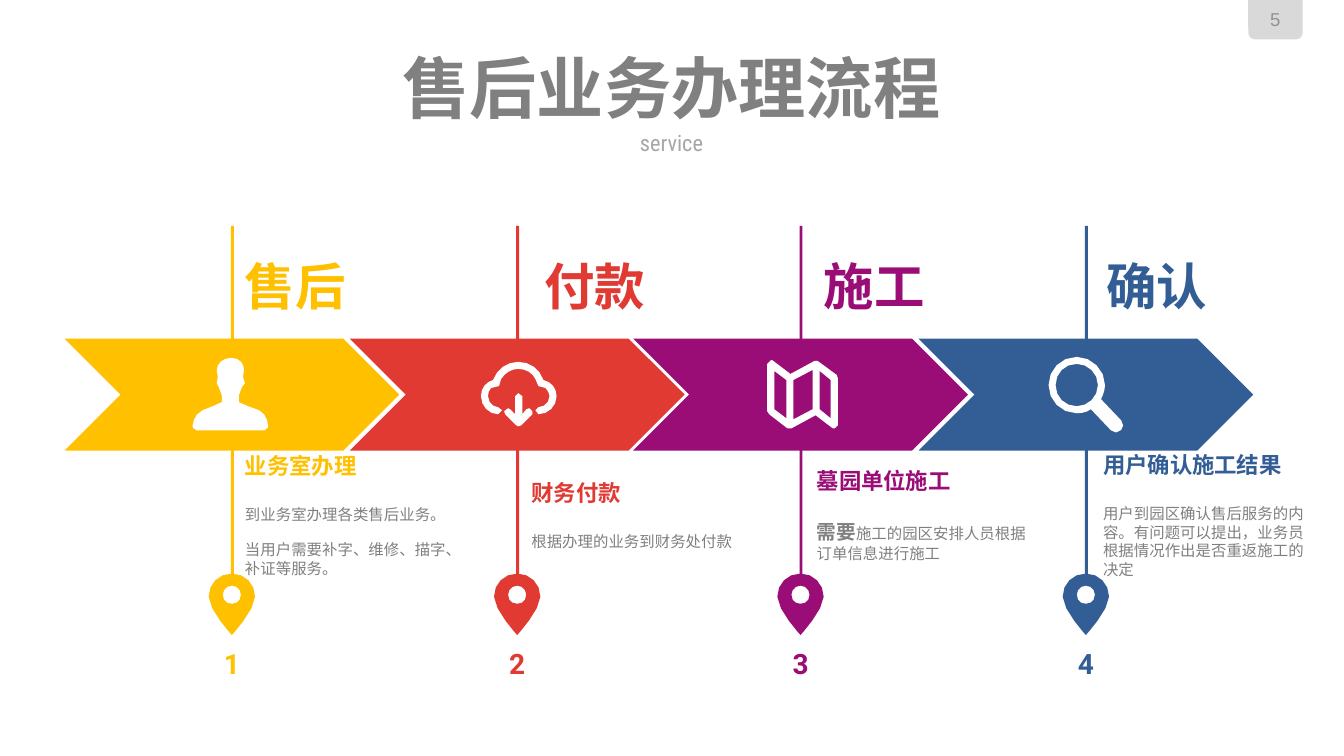
"""Build the after-sales process slide: four arrows with icons, pins and notes."""
from math import dist

from pptx import Presentation
from pptx.dml.color import RGBColor
from pptx.enum.shapes import MSO_SHAPE
from pptx.enum.text import MSO_ANCHOR, PP_ALIGN
from pptx.util import Inches, Pt

rgb = RGBColor.from_string
GREY, WHITE = "808080", "FFFFFF"
HEAD, BODY = "Roboto", "Roboto Condensed"


def add_text(box, paragraphs, align=PP_ALIGN.LEFT):
    """Add a text box; each paragraph is (space after, [(text, size, font, colour, bold)])."""
    tf = slide.shapes.add_textbox(*map(Inches, box)).text_frame
    tf.word_wrap = True
    tf.vertical_anchor = MSO_ANCHOR.MIDDLE
    tf.margin_left = tf.margin_right = tf.margin_top = tf.margin_bottom = 0
    for i, (after, runs) in enumerate(paragraphs):
        p = tf.paragraphs[0] if i == 0 else tf.add_paragraph()
        p.alignment = align
        p.space_after = Pt(after)
        for text, size, font, color, bold in runs:
            r = p.add_run()
            r.text = text
            r.font.size, r.font.name, r.font.bold = Pt(size), font, bold
            r.font.color.rgb = rgb(color)


def add_outline(contours, color, dx=0):
    """Draw closed contours; a pair is a line end, six numbers are a Bezier curve."""
    builder = None
    for (x, y), *segments in contours:
        start = Inches(x + dx), Inches(y)
        if builder is None:
            builder = slide.shapes.build_freeform(*start)
        else:
            builder.move_to(*start)
        points = []
        for seg in segments:
            if len(seg) == 2:
                points.append(seg)
            else:
                x1, y1, x2, y2, x3, y3 = seg
                steps = max(1, min(4, round(dist((x, y), (x3, y3)) / .05)))
                for t in (k / steps for k in range(1, steps + 1)):
                    a, b, c, d = (1 - t)**3, 3 * t * (1 - t)**2, 3 * t * t * (1 - t), t**3
                    points.append((a * x + b * x1 + c * x2 + d * x3,
                                   a * y + b * y1 + c * y2 + d * y3))
            x, y = seg[-2:]
        builder.add_line_segments([(Inches(px + dx), Inches(py)) for px, py in points])
    sp = builder.convert_to_shape()
    sp.shadow.inherit = False
    sp.fill.solid()
    sp.fill.fore_color.rgb = rgb(color)
    sp.line.fill.background()


PIN = [
    [(0, 5.69), (-.13, 5.69, -.23, 5.79, -.23, 5.92), (-.23, 6.05, 0, 6.3, 0, 6.3),
     (0, 6.3, .23, 6.05, .23, 5.92), (.23, 5.79, .13, 5.69, 0, 5.69)],
    [(0, 5.99), (-.05, 5.99, -.09, 5.96, -.09, 5.9), (-.09, 5.85, -.05, 5.81, 0, 5.81),
     (.05, 5.81, .09, 5.85, .09, 5.9), (.09, 5.96, .05, 5.99, 0, 5.99)],
]
PERSON = [
    [(2.62, 4.27), (1.95, 4.27), (1.91, 4.24), (1.91, 4.24, 1.91, 4.11, 2.01, 4.07),
     (2.11, 4.03), (2.2, 3.99), (2.2, 3.92), (2.17, 3.84), (2.15, 3.8), (2.16, 3.74),
     (2.15, 3.67), (2.15, 3.61, 2.21, 3.55, 2.29, 3.55), (2.38, 3.55, 2.42, 3.61, 2.42, 3.67),
     (2.41, 3.74), (2.43, 3.8), (2.4, 3.84), (2.37, 3.92), (2.37, 3.99), (2.46, 4.03),
     (2.57, 4.07), (2.66, 4.11, 2.66, 4.24, 2.66, 4.24)],
]
CLOUD = [
    [(5.34, 4.11), (5.31, 4.07), (5.34, 4.04), (5.4, 4.04, 5.45, 3.99, 5.45, 3.93),
     (5.45, 3.9, 5.43, 3.87, 5.41, 3.85), (5.34, 3.83), (5.31, 3.76),
     (5.28, 3.7, 5.22, 3.66, 5.14, 3.66), (5.07, 3.66, 5.01, 3.7, 4.97, 3.76),
     (4.95, 3.83), (4.87, 3.85), (4.85, 3.87, 4.84, 3.9, 4.84, 3.93),
     (4.84, 3.99, 4.89, 4.04, 4.94, 4.04), (4.98, 4.07), (4.94, 4.11),
     (4.85, 4.11, 4.77, 4.03, 4.77, 3.93), (4.77, 3.85, 4.82, 3.79, 4.89, 3.77),
     (4.93, 3.66, 5.03, 3.59, 5.14, 3.59), (5.26, 3.59, 5.35, 3.66, 5.39, 3.77),
     (5.47, 3.79, 5.52, 3.85, 5.52, 3.93), (5.52, 4.03, 5.44, 4.11, 5.34, 4.11)],
    [(5.04, 4.05), (5.06, 4.06), (5.11, 4.11), (5.11, 3.93), (5.14, 3.9), (5.18, 3.93),
     (5.18, 4.11), (5.22, 4.06), (5.25, 4.05), (5.28, 4.08), (5.28, 4.11), (5.17, 4.22),
     (5.14, 4.23), (5.12, 4.22), (5.01, 4.11), (5, 4.08)],
]
MAP = [
    [(8.31, 4.22), (8.28, 4.25), (8.26, 4.25), (8.09, 4.12), (7.85, 4.25), (7.81, 4.25),
     (7.63, 4.11), (7.61, 4.08), (7.61, 3.61), (7.65, 3.57), (7.67, 3.58), (7.84, 3.71),
     (8.08, 3.58), (8.11, 3.58), (8.3, 3.72), (8.31, 3.75)],
    [(7.8, 4.15), (7.8, 3.77), (7.68, 3.68), (7.68, 4.06)],
    [(8.06, 3.67), (7.87, 3.77), (7.87, 4.16), (8.06, 4.06)],
    [(8.24, 3.77), (8.13, 3.68), (8.13, 4.06), (8.24, 4.15)],
]
MAGNIFIER = [
    [(11.12, 4.17), (11.13, 4.18, 11.14, 4.2, 11.14, 4.22),
     (11.14, 4.25, 11.11, 4.29, 11.07, 4.29), (11.02, 4.27),
     (10.82, 4.06), (10.78, 4.09, 10.73, 4.1, 10.68, 4.1),
     (10.52, 4.1, 10.4, 3.97, 10.4, 3.82), (10.4, 3.67, 10.52, 3.54, 10.68, 3.54),
     (10.83, 3.54, 10.96, 3.67, 10.96, 3.82), (10.96, 3.87, 10.94, 3.92, 10.92, 3.96)],
    [(10.68, 3.61), (10.56, 3.61, 10.47, 3.7, 10.47, 3.82),
     (10.47, 3.94, 10.56, 4.03, 10.68, 4.03), (10.79, 4.03, 10.89, 3.94, 10.89, 3.82),
     (10.89, 3.7, 10.79, 3.61, 10.68, 3.61)],
]

STEPS = [
    (2.3, "FFC000", PERSON, "售后", 2.93, "业务室办理", (2.43, 4.49, 2.12, 1.23),
     [[("到业务室办理各类售后业务。", 11, BODY, GREY, False)],
      [("当用户需要补字、维修、描字、补证等服务。", 11, BODY, GREY, False)]]),
    (5.13, "E03A33", CLOUD, "付款", 5.9, "财务付款", (5.27, 4.76, 2.12, .69),
     [[("根据办理的业务到财务处付款", 11, BODY, GREY, False)]]),
    (7.94, "9B0D76", MAP, "施工", 8.67, "墓园单位施工", (8.1, 4.64, 2.12, .93),
     [[("需要", 14, HEAD, GREY, True),
       ("施工的园区安排人员根据订单信息进行施工", 11, BODY, GREY, False)]]),
    (10.77, "335E95", MAGNIFIER, "确认", 11.47, "用户确认施工结果", (10.94, 4.48, 2.12, 1.25),
     [[("用户到园区确认售后服务的内容。有问题可以提出，业务员根据情况作出是否重返施工的决定",
        11, BODY, GREY, False)]]),
]

prs = Presentation()
prs.slide_width, prs.slide_height = Inches(13.33), Inches(7.5)
slide = prs.slides.add_slide(prs.slide_layouts[6])

presets = [(MSO_SHAPE.ROUND_2_SAME_RECTANGLE, (12.38, 0, .54, .39), "D9D9D9")]
for axis, color, *_ in STEPS:
    presets += [(MSO_SHAPE.RECTANGLE, (axis - .01, 2.24, .03, 3.5), color),
                (MSO_SHAPE.NOTCHED_RIGHT_ARROW, (axis - 1.66, 3.36, 3.32, 1.11), color)]
for kind, box, color in presets:
    sp = slide.shapes.add_shape(kind, *map(Inches, box))
    sp.shadow.inherit = False
    sp.fill.solid()
    sp.fill.fore_color.rgb = rgb(color)
    sp.line.fill.background()
    if kind == MSO_SHAPE.ROUND_2_SAME_RECTANGLE:
        sp.rotation = 180
    elif kind == MSO_SHAPE.NOTCHED_RIGHT_ARROW:
        sp.adjustments[0], sp.adjustments[1] = 1, .5

for box, text, size, font, color, bold in [
    ((12.43, .08, .44, .22), "5", 13.3, "Arial", "929292", False),
    ((.56, 1.29, 12.2, .25), "service", 16, BODY, "A6A6A6", False),
    ((.56, .5, 12.2, .72), "售后业务办理流程", 48, HEAD, GREY, True),
]:
    add_text(box, [(0, [(text, size, font, color, bold)])], PP_ALIGN.CENTER)

for n, (axis, color, icon, label, label_x, heading, box, notes) in enumerate(STEPS, 1):
    add_outline(PIN, color, axis)
    add_outline(icon, WHITE)
    add_text((label_x - .63, 2.53, 1.26, .61), [(0, [(label, 36, HEAD, color, True)])],
             PP_ALIGN.CENTER)
    add_text(box, [(18.75, [(heading, 16, HEAD, color, True)])] + [(12, runs) for runs in notes])
    add_text((axis - .79, 6.41, 1.58, .34), [(0, [(str(n), 20, HEAD, color, True)])],
             PP_ALIGN.CENTER)

prs.save("out.pptx")
